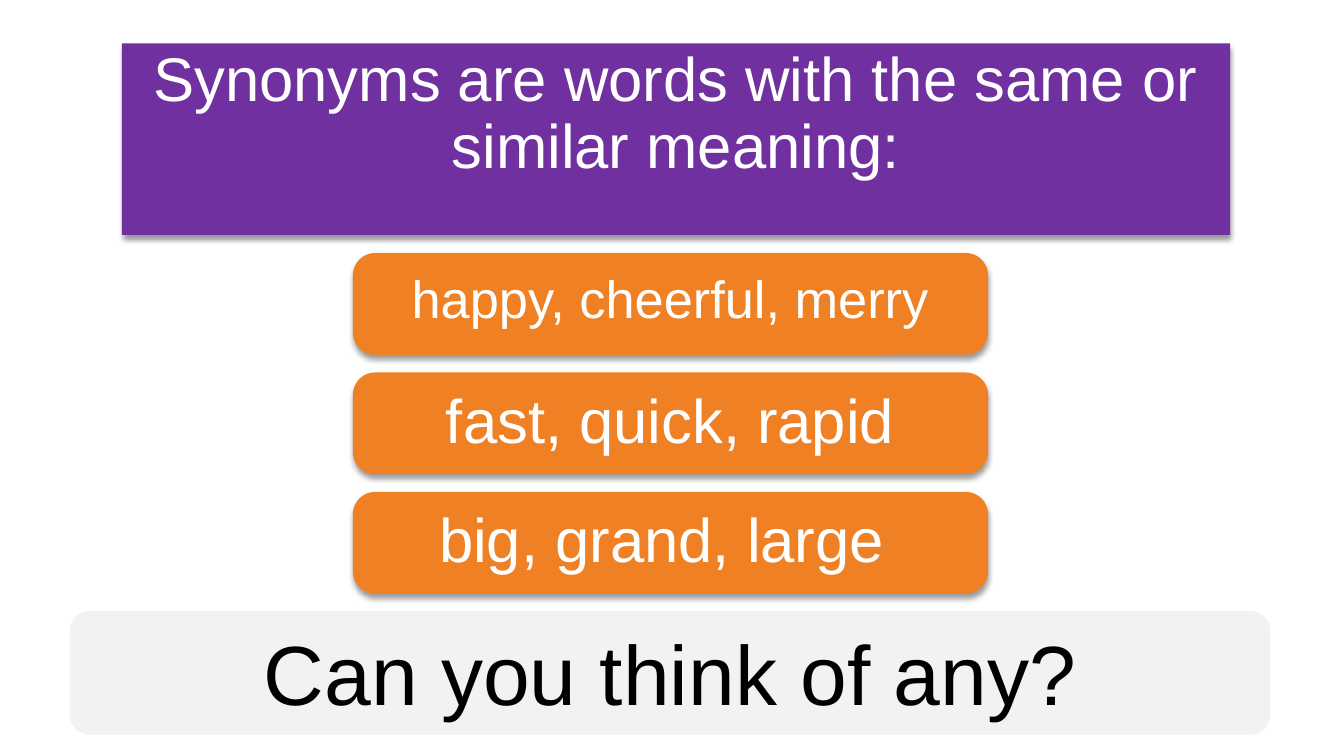
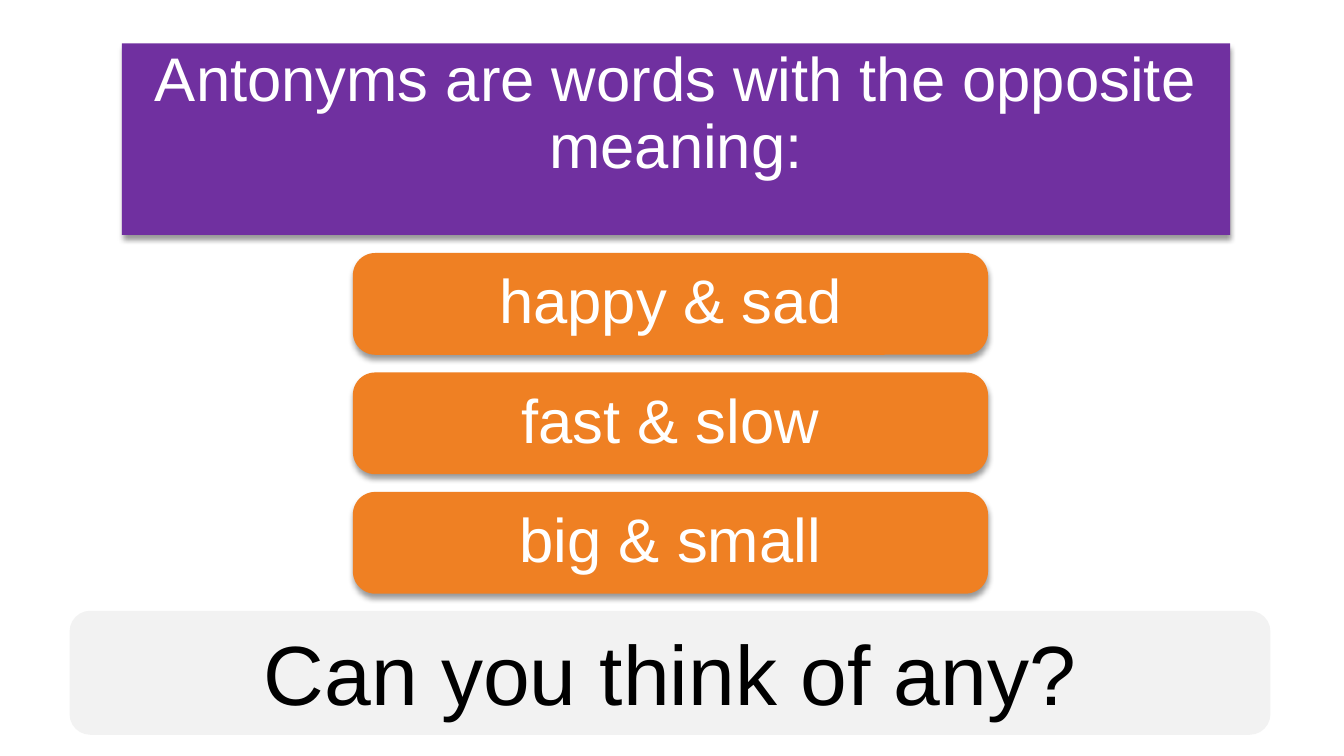
from lxml.etree import SubElement
from pptx import Presentation
from pptx.dml.color import RGBColor
from pptx.enum.shapes import MSO_SHAPE
from pptx.enum.text import MSO_ANCHOR, MSO_AUTO_SIZE, PP_ALIGN
from pptx.oxml import parse_xml
from pptx.oxml.ns import nsdecls, qn
from pptx.util import Inches, Pt

PURPLE = RGBColor(0x70, 0x30, 0xA0)
ORANGE = RGBColor(0xEF, 0x80, 0x23)
PALE_GREY = RGBColor(0xF2, 0xF2, 0xF2)
WHITE = RGBColor(0xFF, 0xFF, 0xFF)
BLACK = RGBColor(0x00, 0x00, 0x00)

FONT_NAME = "Arial"
TITLE_BOX = (1.21, 0.43, 10.99, 1.9)
EXAMPLES_BOX = (3.5, 2.51, 6.3, 3.38)
PROMPT_BOX = (0.69, 6.06, 11.91, 1.23)
EXAMPLE_HEIGHT = 1.01
EXAMPLE_ROUNDING = 0.22
PROMPT = "Can you think of any?"

REGULAR = {"size": 44, "line_spacing": 0.9}
COMPACT = {"size": 37.4, "line_spacing": 0.8}

LESSONS = [
    ("Synonyms are words with the same or similar meaning:",
     [("happy, cheerful, merry", COMPACT),
      ("fast, quick, rapid", REGULAR),
      ("big, grand, large ", REGULAR)]),
    ("Antonyms are words with the opposite meaning:",
     [("happy & sad", REGULAR),
      ("fast & slow", REGULAR),
      ("big & small", REGULAR)]),
]


def set_attributes(target, values):
    """Set each named attribute of the target."""
    for name, value in values.items():
        setattr(target, name, value)


def add_soft_shadow(shape):
    """Give the shape a soft shadow that falls straight down."""
    effects = shape._element.spPr.find(qn("a:effectLst"))
    shadow = SubElement(effects, qn("a:outerShdw"), blurRad=str(Pt(4)),
                        dist=str(Pt(3)), dir="5400000", rotWithShape="0")
    color = SubElement(shadow, qn("a:srgbClr"), val=str(BLACK))
    SubElement(color, qn("a:alpha"), val="40000")


def style_panel(shape, fill_color, shadow=True):
    """Fill the shape without an outline and set its shadow."""
    shape.fill.solid()
    shape.fill.fore_color.rgb = fill_color
    shape.line.fill.background()
    shape.shadow.inherit = False
    if shadow:
        add_soft_shadow(shape)


def write_text(shape, text, size, color=WHITE, anchor=MSO_ANCHOR.TOP,
               auto_size=MSO_AUTO_SIZE.NONE, **paragraph_format):
    """Write one centred paragraph into the shape."""
    frame = shape.text_frame
    frame.text = text
    set_attributes(frame, {"word_wrap": True, "vertical_anchor": anchor,
                           "auto_size": auto_size})
    paragraph = frame.paragraphs[0]
    set_attributes(paragraph, {"alignment": PP_ALIGN.CENTER, **paragraph_format})
    font = paragraph.runs[0].font
    set_attributes(font, {"name": FONT_NAME, "size": Pt(size)})
    font.color.rgb = color


def add_panel(slide, box, fill_color, shadow=True):
    """Add a rounded panel in the given box."""
    shape = slide.shapes.add_shape(MSO_SHAPE.ROUNDED_RECTANGLE,
                                   *[Inches(length) for length in box])
    style_panel(shape, fill_color, shadow)
    return shape


def place_title(slide, box, text):
    """Turn the title placeholder into a rounded purple banner."""
    title = slide.shapes.title
    lengths = [Inches(length) for length in box]
    set_attributes(title, dict(zip(("left", "top", "width", "height"), lengths)))
    title._element.spPr.append(parse_xml(
        f'<a:prstGeom {nsdecls("a")} prst="roundRect"><a:avLst/></a:prstGeom>'))
    style_panel(title, PURPLE)
    write_text(title, text, space_before=Pt(10), **REGULAR)


def add_examples(slide, box, examples):
    """Stack the example panels evenly in the box."""
    left, top, width, height = box
    step = (height - EXAMPLE_HEIGHT) / (len(examples) - 1)
    for index, (text, text_format) in enumerate(examples):
        panel = add_panel(slide, (left, top + index * step, width, EXAMPLE_HEIGHT),
                          ORANGE)
        panel.adjustments[0] = EXAMPLE_ROUNDING
        write_text(panel, text, anchor=MSO_ANCHOR.MIDDLE, **text_format)


def add_prompt(slide, box):
    """Add the closing question in a pale panel."""
    panel = add_panel(slide, box, PALE_GREY, shadow=False)
    write_text(panel, PROMPT, 60, BLACK,
               auto_size=MSO_AUTO_SIZE.SHAPE_TO_FIT_TEXT)


def add_lesson_slide(presentation, title, examples):
    """Add a slide with a definition, its examples and a question."""
    slide = presentation.slides.add_slide(presentation.slide_layouts[5])
    place_title(slide, TITLE_BOX, title)
    add_examples(slide, EXAMPLES_BOX, examples)
    add_prompt(slide, PROMPT_BOX)


def main():
    """Build and save the presentation."""
    presentation = Presentation()
    set_attributes(presentation, {"slide_width": Inches(13.33),
                                  "slide_height": Inches(7.5)})
    for title, examples in LESSONS:
        add_lesson_slide(presentation, title, examples)
    presentation.save("out.pptx")


if __name__ == "__main__":
    main()
